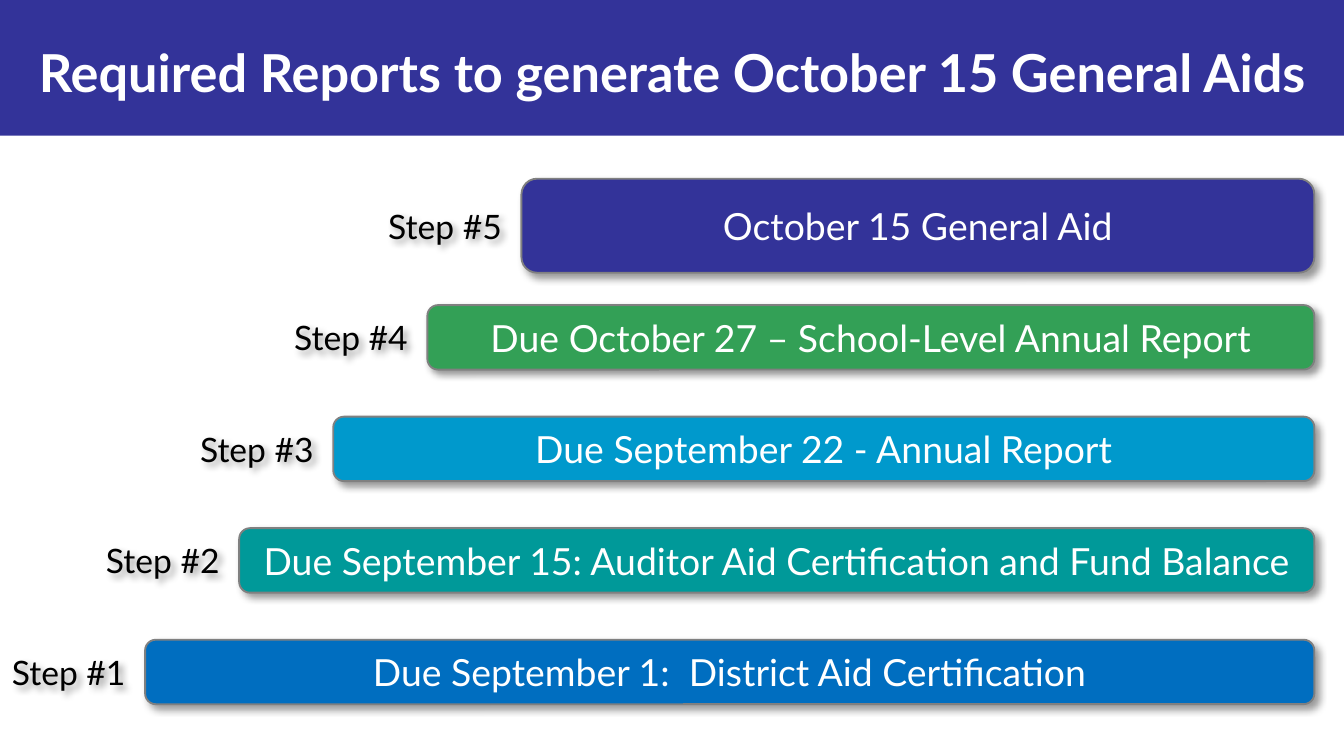
from dataclasses import dataclass

from lxml.etree import SubElement
from pptx import Presentation
from pptx.dml.color import RGBColor
from pptx.enum.shapes import MSO_SHAPE
from pptx.enum.text import MSO_ANCHOR, MSO_AUTO_SIZE, PP_ALIGN
from pptx.oxml.ns import qn
from pptx.util import Pt

SCALE = 9144  # EMU in one px, 100 px to the inch


@dataclass(frozen=True)
class Theme:
    font: str = "Lato"
    navy: str = "333399"
    green: str = "33A056"
    sky: str = "0099CC"
    teal: str = "009999"
    blue: str = "006EC0"
    white: str = "FFFFFF"
    black: str = "000000"
    edge: str = "808080"
    head: int = 28
    bar: int = 20
    label: int = 18


THEME = Theme()

# Top to bottom: bar text, colour, height
STEPS = [
    ("October 15 General Aid", THEME.navy, 70),
    ("Due October 27 – School-Level Annual Report", THEME.green, 48),
    ("Due September 22 - Annual Report", THEME.sky, 48),
    ("Due September 15: Auditor Aid Certification and Fund Balance", THEME.teal, 48),
    ("Due September 1:  District Aid Certification", THEME.blue, 48),
]
WIDTH = 1000
RIGHT = 978
FIRST_LEFT, INDENT = 388, 70
FIRST_MID, PITCH = 168, 83
LABEL_W, LABEL_H = 109, 40


def px(*sizes):
    return [size * SCALE for size in sizes]


def put_text(shape, text, size, color=THEME.white, bold=False,
             align=PP_ALIGN.CENTER, anchor=MSO_ANCHOR.MIDDLE,
             wrap=True, fit=MSO_AUTO_SIZE.NONE):
    frame = shape.text_frame
    frame.word_wrap = wrap
    frame.auto_size = fit
    frame.vertical_anchor = anchor
    para = frame.paragraphs[0]
    para.alignment = align
    run = para.add_run()
    run.text = text
    font = run.font
    font.name, font.size, font.bold = THEME.font, Pt(size), bold
    font.color.rgb = RGBColor.from_string(color)


def add_box(slide, kind, box, fill, edge=None):
    shape = slide.shapes.add_shape(kind, *px(*box))
    shape.shadow.inherit = False
    shape.fill.solid()
    shape.fill.fore_color.rgb = RGBColor.from_string(fill)
    if edge:
        shape.line.color.rgb = RGBColor.from_string(edge)
        shape.line.width = Pt(1)
    else:
        shape.line.fill.background()
    return shape


def cast_shadow(shape):
    """Add a soft shadow, 3 pt down and to the right."""
    shape.shadow.inherit = False
    effects = shape.element.spPr.find(qn("a:effectLst"))
    outer = SubElement(effects, qn("a:outerShdw"), blurRad=str(Pt(4)),
                       dist=str(Pt(3)), dir=str(45 * 60000),
                       algn="tl", rotWithShape="0")
    color = SubElement(outer, qn("a:srgbClr"), val=THEME.black)
    SubElement(color, qn("a:alpha"), val="40000")


def add_title(slide, text):
    add_box(slide, MSO_SHAPE.RECTANGLE, (-1, 0, WIDTH + 1, 101), THEME.navy)
    title = slide.shapes.title
    title.left, title.top, title.width, title.height = px(0, 3, WIDTH, 101)
    put_text(title, text, THEME.head, bold=True)
    # The band is drawn behind the title
    tree = title.element.getparent()
    tree.append(title.element)


def add_bar(slide, text, fill, left, mid, height):
    box = (left, mid - height // 2, RIGHT - left, height)
    bar = add_box(slide, MSO_SHAPE.ROUNDED_RECTANGLE, box, fill, THEME.edge)
    cast_shadow(bar)
    put_text(bar, text, THEME.bar)


def add_label(slide, text, right, mid):
    box = (right - LABEL_W, mid - LABEL_H // 2, LABEL_W, LABEL_H)
    label = slide.shapes.add_textbox(*px(*box))
    cast_shadow(label)
    put_text(label, text, THEME.label, color=THEME.black, align=PP_ALIGN.LEFT,
             anchor=MSO_ANCHOR.TOP, wrap=False,
             fit=MSO_AUTO_SIZE.SHAPE_TO_FIT_TEXT)


def main():
    deck = Presentation()
    deck.slide_width = WIDTH * SCALE
    deck.slide_height = deck.slide_width * 9 // 16
    slide = deck.slides.add_slide(deck.slide_layouts[5])
    add_title(slide, "Required Reports to generate October 15 General Aids")
    for row, (text, fill, height) in enumerate(STEPS):
        left = FIRST_LEFT - row * INDENT
        mid = FIRST_MID + row * PITCH
        add_bar(slide, text, fill, left, mid, height)
        add_label(slide, f"Step #{len(STEPS) - row}", left, mid)
    deck.save("out.pptx")


if __name__ == "__main__":
    main()
